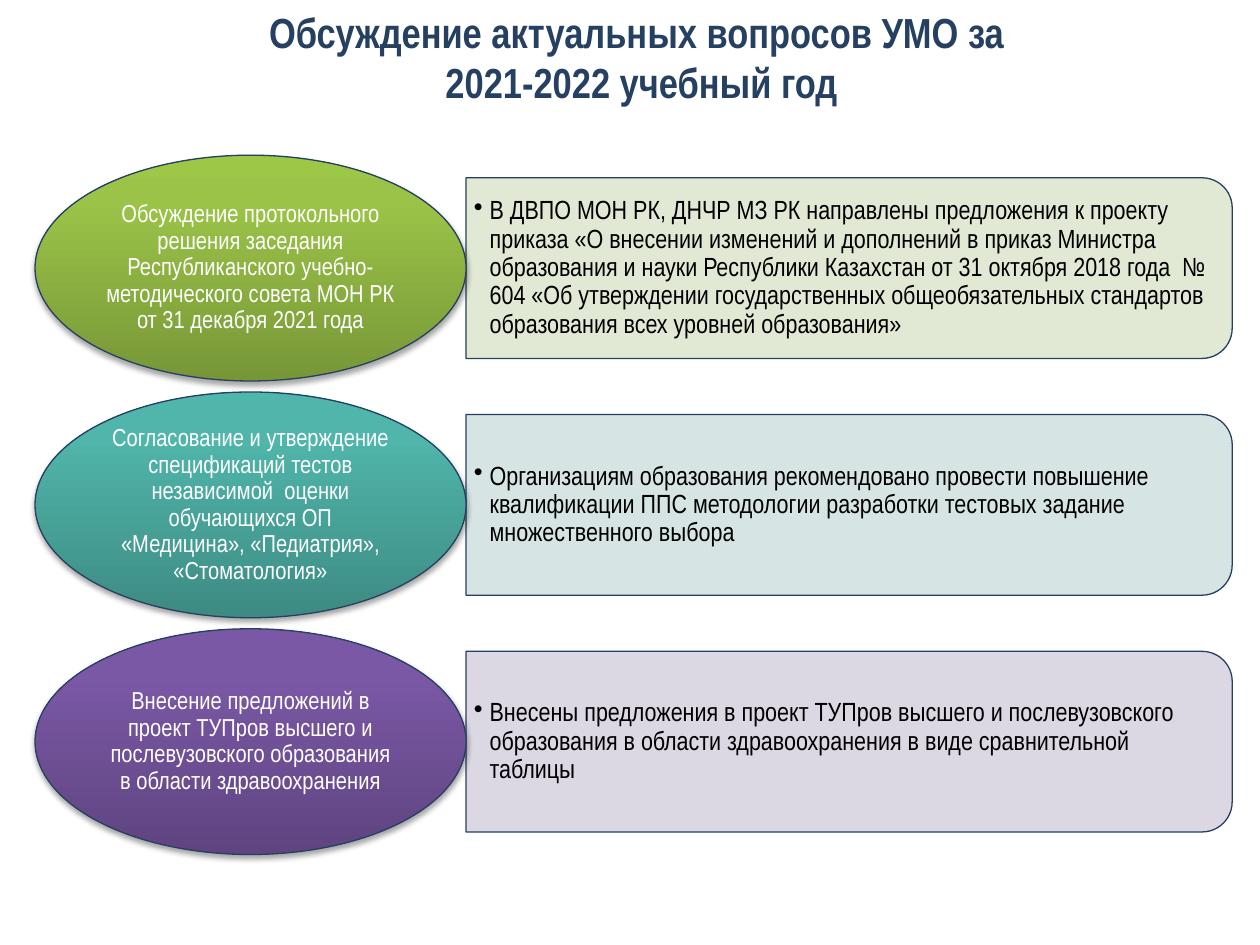
from copy import deepcopy

from lxml import etree
from pptx import Presentation
from pptx.dml.color import RGBColor
from pptx.enum.shapes import MSO_SHAPE
from pptx.enum.text import MSO_ANCHOR, PP_ALIGN
from pptx.oxml.ns import qn
from pptx.util import Pt

ELLIPSE, CARD = MSO_SHAPE.OVAL, MSO_SHAPE.ROUND_2_SAME_RECTANGLE
TOP, MIDDLE = MSO_ANCHOR.TOP, MSO_ANCHOR.MIDDLE
LEFT, CENTER = PP_ALIGN.LEFT, PP_ALIGN.CENTER

# Content
TITLE = "Обсуждение актуальных вопросов УМО за \v2021-2022 учебный год"
ISSUES = [
    {
        "topic": "Обсуждение протокольного решения заседания Республиканского "
                 "учебно-методического совета МОН РК от 31 декабря 2021 года",
        "result": "В ДВПО МОН РК, ДНЧР МЗ РК направлены предложения к проекту приказа "
                  "«О внесении изменений и дополнений в приказ Министра образования и науки "
                  "Республики Казахстан от 31 октября 2018 года  № 604 «Об утверждении "
                  "государственных общеобязательных стандартов образования всех уровней "
                  "образования»",
        "gradient": ("779737", "9BC348", "9DC746"),
        "tint": "DEE7D1",
    },
    {
        "topic": "Согласование и утверждение спецификаций тестов независимой  оценки "
                 "обучающихся ОП «Медицина», «Педиатрия», «Стоматология»",
        "result": "Организациям образования рекомендовано провести повышение квалификации "
                  "ППС методологии разработки тестовых задание множественного выбора",
        "gradient": ("3D8B83", "50B5AA", "4EB8AC"),
        "tint": "D2E3E2",
    },
    {
        "topic": "Внесение предложений в проект ТУПров высшего и послевузовского "
                 "образования в области здравоохранения",
        "result": "Внесены предложения в проект ТУПров высшего и послевузовского "
                  "образования в области здравоохранения в виде сравнительной таблицы",
        "gradient": ("5F4480", "7B58A6", "7C57A8"),
        "tint": "D8D3E0",
    },
]

THEME = {
    "font": "Arial Narrow",
    "navy": "254061", "white": "FFFFFF", "black": "000000",
    "title_size": 24, "topic_size": 14, "result_size": 15,
    "line": 0.75, "gradient_stops": (0, 0.8, 1),
}

# Layout, in points
SLIDE_W, SLIDE_H = 720, 540
TITLE_BOX = (42.5, 0, 648, 90)
FIRST_CENTER, ROW_STEP = 153.2, 135.3
ELLIPSE_X, ELLIPSE_W, ELLIPSE_H = 20, 246.3, 129
TOPIC_W, TOPIC_H = 174.2, 91
CARD_X, CARD_W, CARD_H = 266.3, 437.8, 103.2
RESULT_W, RESULT_H = 432.7, 93
BULLET_INDENT = 9


def rgb(code):
    return RGBColor.from_string(code)


def add_text(slide, text, box, size, color, align, anchor=MIDDLE, insets=(4.5, 2.25), spacing=0.9):
    frame = slide.shapes.add_textbox(*map(Pt, box)).text_frame
    frame.word_wrap = True
    frame.vertical_anchor = anchor
    frame.margin_left = frame.margin_right = Pt(insets[0])
    frame.margin_top = frame.margin_bottom = Pt(insets[1])
    paragraph = frame.paragraphs[0]
    paragraph.text = text
    paragraph.alignment = align
    paragraph.line_spacing = spacing
    paragraph.font.name = THEME["font"]
    paragraph.font.size = Pt(size)
    paragraph.font.color.rgb = rgb(color)
    return paragraph


def add_outlined(slide, kind, box):
    shape = slide.shapes.add_shape(kind, *map(Pt, box))
    shape.shadow.inherit = False
    shape.line.color.rgb = rgb(THEME["navy"])
    shape.line.width = Pt(THEME["line"])
    return shape


def set_gradient(shape, colors):
    fill = shape.fill
    fill.gradient()
    fill.gradient_angle = 90
    stop_list = shape._element.spPr.find(qn("a:gradFill")).find(qn("a:gsLst"))
    stop_list.append(deepcopy(stop_list[-1]))
    for stop, color, position in zip(fill.gradient_stops, colors, THEME["gradient_stops"]):
        stop.color.rgb = rgb(color)
        stop.position = position


def add_shadow(shape):
    effects = shape._element.spPr.find(qn("a:effectLst"))
    shadow = etree.SubElement(effects, qn("a:outerShdw"), blurRad=str(Pt(3.1)),
                              dist=str(Pt(1.8)), dir="5400000", rotWithShape="0")
    color = etree.SubElement(shadow, qn("a:srgbClr"), val=THEME["black"])
    etree.SubElement(color, qn("a:alpha"), val="35000")


def set_tint(shape, color):
    shape.fill.solid()
    shape.fill.fore_color.rgb = rgb(color)
    color_node = shape._element.spPr.find(qn("a:solidFill"))[0]
    etree.SubElement(color_node, qn("a:alpha"), val="90000")


def add_bullet(paragraph):
    properties = paragraph._p.get_or_add_pPr()
    properties.set("marL", str(Pt(BULLET_INDENT)))
    properties.set("indent", str(-Pt(BULLET_INDENT)))
    etree.SubElement(properties, qn("a:buChar"), char="•")
    # The bullet has to come before the default run properties
    properties.append(properties.find(qn("a:defRPr")))


def add_issue(slide, issue, center):
    # Result card: an upright shape turned a quarter so its round corners face right
    card_left = CARD_X + (CARD_W - CARD_H) / 2
    card = add_outlined(slide, CARD, (card_left, center - CARD_W / 2, CARD_H, CARD_W))
    card.rotation = 90
    set_tint(card, issue["tint"])
    result = add_text(slide, issue["result"], (CARD_X, center - RESULT_H / 2, RESULT_W, RESULT_H),
                      THEME["result_size"], THEME["black"], LEFT)
    add_bullet(result)

    # Topic ellipse
    ellipse = add_outlined(slide, ELLIPSE, (ELLIPSE_X, center - ELLIPSE_H / 2, ELLIPSE_W, ELLIPSE_H))
    set_gradient(ellipse, issue["gradient"])
    add_shadow(ellipse)
    topic_left = ELLIPSE_X + (ELLIPSE_W - TOPIC_W) / 2
    add_text(slide, issue["topic"], (topic_left, center - TOPIC_H / 2, TOPIC_W, TOPIC_H),
             THEME["topic_size"], THEME["white"], CENTER)


def main():
    deck = Presentation()
    deck.slide_width, deck.slide_height = Pt(SLIDE_W), Pt(SLIDE_H)
    slide = deck.slides.add_slide(deck.slide_layouts[6])

    title = add_text(slide, TITLE, TITLE_BOX, THEME["title_size"], THEME["navy"], CENTER,
                     anchor=TOP, insets=(7.2, 3.6), spacing=1.0)
    title.font.bold = True

    for row, issue in enumerate(ISSUES):
        add_issue(slide, issue, FIRST_CENTER + row * ROW_STEP)

    deck.save("out.pptx")


if __name__ == "__main__":
    main()
